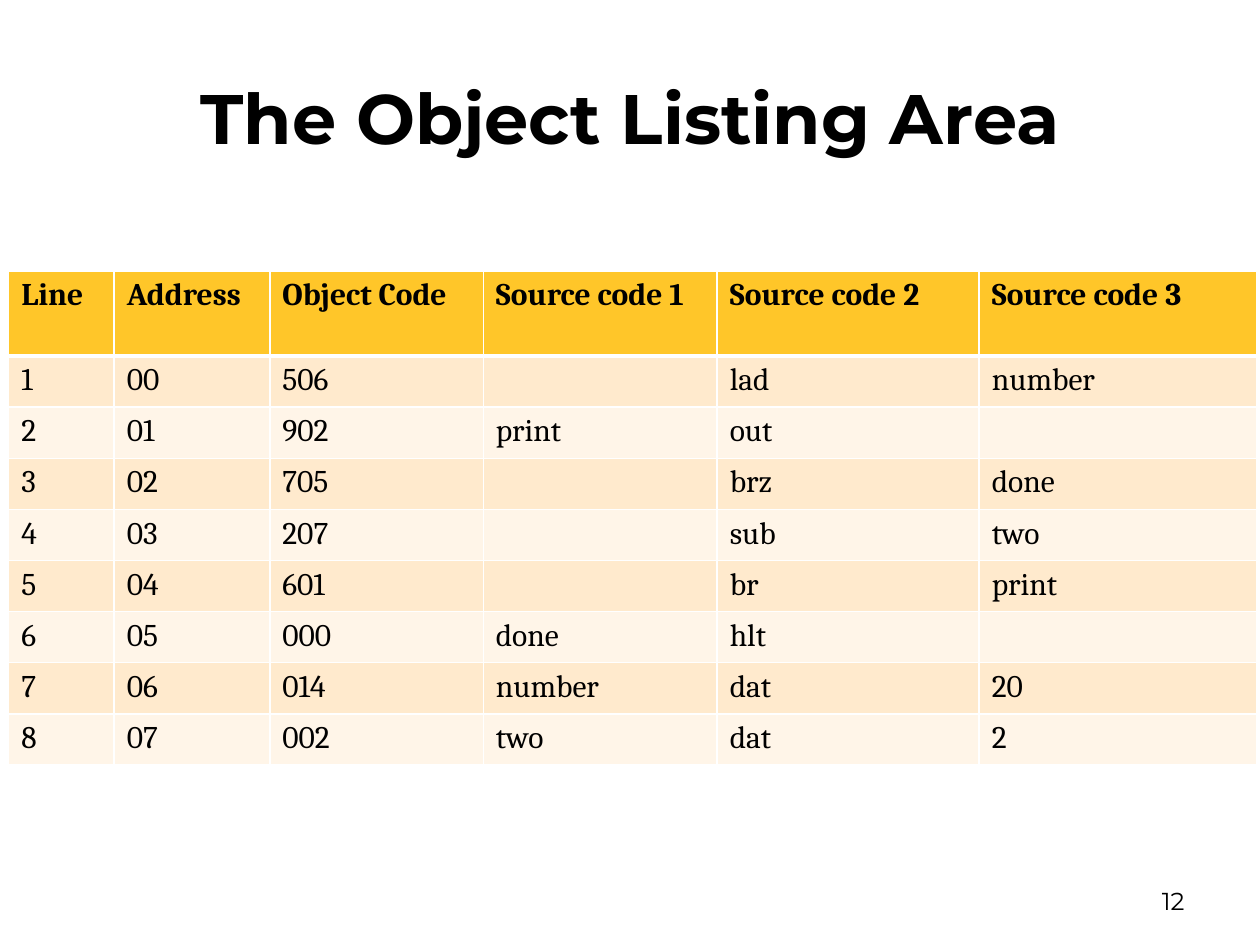
import dataclasses

import pptx
import pptx.dml.color
import pptx.enum.text
import pptx.oxml
import pptx.oxml.ns
import pptx.util

Pt = pptx.util.Pt
ALIGN = pptx.enum.text.PP_ALIGN
ANCHOR = pptx.enum.text.MSO_ANCHOR
TITLE_ONLY = 5


@dataclasses.dataclass(frozen=True)
class Theme:
    text: str = "000000"
    border: str = "FFFFFF"
    header: str = "FFC629"
    bands: tuple = ("FFEACD", "FFF5E8")
    display_font: str = "Montserrat"
    table_font: str = "Cambria"
    title_size: float = 40
    table_size: float = 18
    number_size: float = 14
    thin_line: float = 1
    thick_line: float = 3


HEADINGS = ["Line", "Address", "Object Code",
            "Source code 1", "Source code 2", "Source code 3"]
LISTING = [
    ("506", "", "lad", "number"),
    ("902", "print", "out", ""),
    ("705", "", "brz", "done"),
    ("207", "", "sub", "two"),
    ("601", "", "br", "print"),
    ("000", "done", "hlt", ""),
    ("014", "number", "dat", "20"),
    ("002", "two", "dat", "2"),
]
COLUMN_WIDTHS = [60.3, 88.9, 122, 133.7, 149.7, 158.7]
HEADER_HEIGHT = 48.7
ROW_HEIGHT = 29.2


class SlideBuilder:
    def __init__(self, presentation, theme):
        self.theme = theme
        layout = presentation.slide_layouts[TITLE_ONLY]
        self.slide = presentation.slides.add_slide(layout)

    def add_text(self, frame, text, font, size, bold=False, align=None):
        paragraph = frame.paragraphs[0]
        paragraph.alignment = align
        run = paragraph.add_run()
        run.text = text
        run.font.name = font
        run.font.size = Pt(size)
        run.font.bold = bold
        run.font.color.rgb = pptx.dml.color.RGBColor.from_string(self.theme.text)

    def title(self, text, left, top, width, height):
        shape = self.slide.shapes.title
        shape.left, shape.top = Pt(left), Pt(top)
        shape.width, shape.height = Pt(width), Pt(height)
        shape.text_frame.vertical_anchor = ANCHOR.MIDDLE
        self.add_text(shape.text_frame, text, self.theme.display_font,
                      self.theme.title_size, True, ALIGN.CENTER)

    def page_number(self, text, left, top, width, height):
        shape = self.slide.shapes.add_textbox(
            Pt(left), Pt(top), Pt(width), Pt(height))
        shape.text_frame.word_wrap = True
        shape.text_frame.vertical_anchor = ANCHOR.MIDDLE
        self.add_text(shape.text_frame, text, self.theme.display_font,
                      self.theme.number_size, align=ALIGN.RIGHT)

    def table(self, rows, left, top, widths, heights):
        shape = self.slide.shapes.add_table(
            len(rows), len(widths), Pt(left), Pt(top),
            Pt(sum(widths)), Pt(sum(heights)))
        table = shape.table
        for column, width in zip(table.columns, widths):
            column.width = Pt(width)
        for row, height in zip(table.rows, heights):
            row.height = Pt(height)
        for row_index, values in enumerate(rows):
            for column_index, text in enumerate(values):
                self.cell(table.cell(row_index, column_index), text, row_index)

    def cell(self, cell, text, row_index):
        theme = self.theme
        is_header = row_index == 0
        self.borders(cell,
                     top=theme.thick_line if row_index == 1 else theme.thin_line,
                     bottom=theme.thick_line if is_header else theme.thin_line)
        color = theme.header if is_header else theme.bands[(row_index - 1) % 2]
        cell.fill.solid()
        cell.fill.fore_color.rgb = pptx.dml.color.RGBColor.from_string(color)
        if text:
            self.add_text(cell.text_frame, text, theme.table_font,
                          theme.table_size, is_header)

    def borders(self, cell, top, bottom):
        """Add the cell's edge lines; they must precede its fill in the XML."""
        properties = cell._tc.get_or_add_tcPr()
        side = self.theme.thin_line
        for edge, width in (("L", side), ("R", side), ("T", top), ("B", bottom)):
            properties.append(pptx.oxml.parse_xml(
                f'<a:ln{edge} {pptx.oxml.ns.nsdecls("a")} w="{Pt(width)}">'
                f'<a:solidFill><a:srgbClr val="{self.theme.border}"/>'
                f'</a:solidFill></a:ln{edge}>'))


def main():
    presentation = pptx.Presentation()
    presentation.slide_width, presentation.slide_height = Pt(720), Pt(540)
    builder = SlideBuilder(presentation, Theme())
    builder.title("The Object Listing Area", 36, 21.6, 648, 90)
    builder.page_number("12", 516, 500.4, 168, 28.8)
    rows = [HEADINGS] + [(str(address + 1), f"{address:02d}", *fields)
                         for address, fields in enumerate(LISTING)]
    heights = [HEADER_HEIGHT] + [ROW_HEIGHT] * len(LISTING)
    builder.table(rows, 5, 154.8, COLUMN_WIDTHS, heights)
    presentation.save("out.pptx")


if __name__ == "__main__":
    main()
